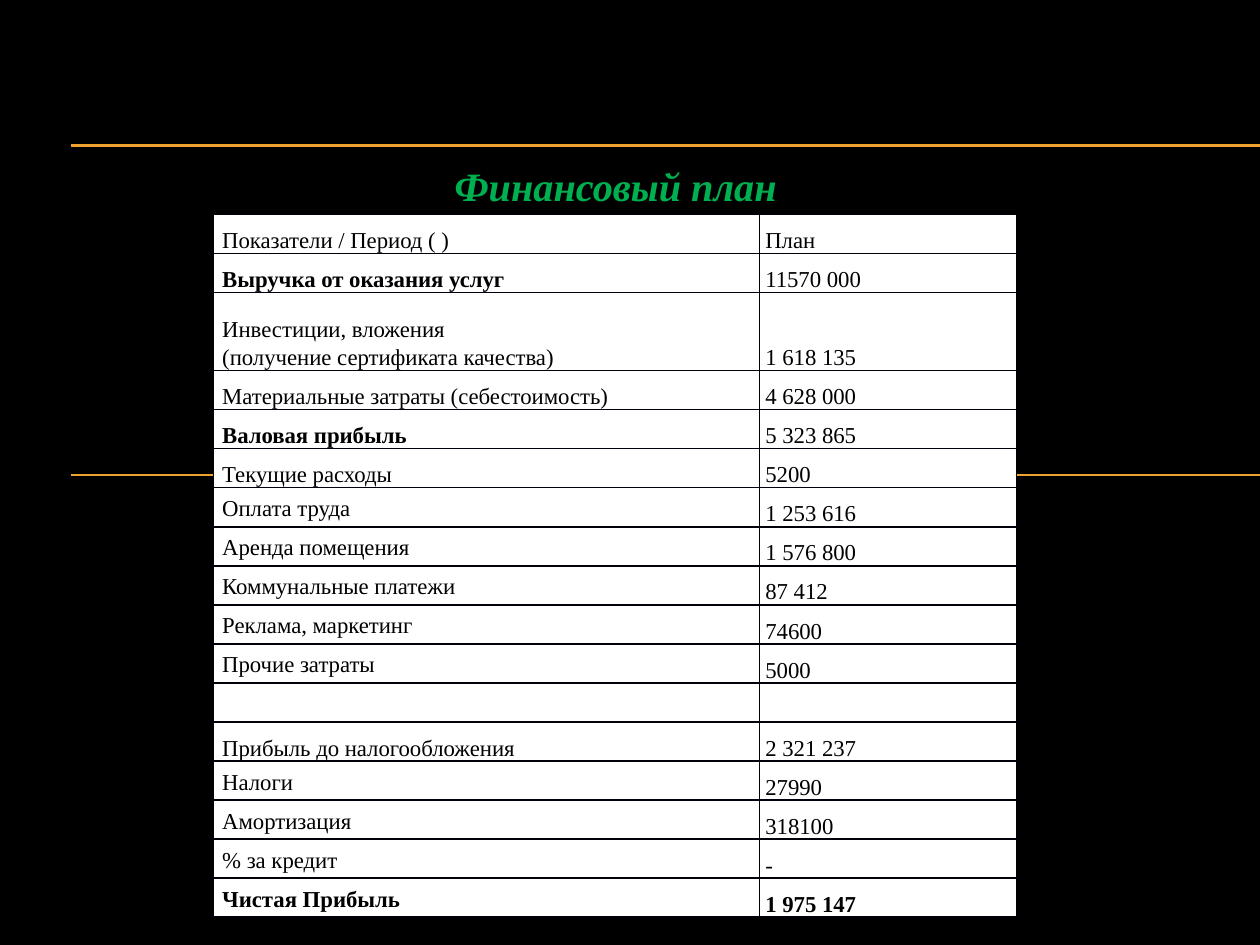
from lxml.etree import SubElement
from pptx import Presentation
from pptx.dml.color import RGBColor
from pptx.enum.shapes import MSO_CONNECTOR
from pptx.enum.text import MSO_ANCHOR, MSO_AUTO_SIZE, PP_ALIGN
from pptx.oxml.ns import qn
from pptx.util import Pt

BLACK = RGBColor(0, 0, 0)
WHITE = RGBColor(255, 255, 255)
GREEN = RGBColor(0x00, 0xB0, 0x50)
AMBER = RGBColor(0xF0, 0xA2, 0x2E)
EDGE = RGBColor(0x00, 0x00, 0x0A)
FACE = "Times New Roman"

LOW, MID = MSO_ANCHOR.BOTTOM, MSO_ANCHOR.MIDDLE
# Label, value, label anchor, label bold, value bold
ROWS = [
    ("Показатели / Период ( )", "План", LOW, False, False),
    ("Выручка от оказания услуг", "11570 000", LOW, True, False),
    ("Инвестиции, вложения\n(получение сертификата качества)",
     "1 618 135", LOW, False, False),
    ("Материальные затраты (себестоимость)", "4 628 000", LOW, False, False),
    ("Валовая прибыль", "5 323 865", LOW, True, False),
    ("Текущие расходы", "5200", LOW, False, False),
    ("Оплата труда", "1 253 616", MID, False, False),
    ("Аренда помещения", "1 576 800", MID, False, False),
    ("Коммунальные платежи", "87 412", MID, False, False),
    ("Реклама, маркетинг", "74600", MID, False, False),
    ("Прочие затраты", "5000", MID, False, False),
    ("", "", LOW, False, False),
    ("Прибыль до налогообложения", "2 321 237", LOW, False, False),
    ("Налоги", "27990", MID, False, False),
    ("Амортизация", "318100", MID, False, False),
    ("% за кредит", "-", MID, False, False),
    ("Чистая Прибыль", "1 975 147", MID, True, True),
]


def add_run(para, text, size, color, bold=False, italic=False):
    run = para.add_run()
    run.text = text
    font = run.font
    font.name, font.size = FACE, Pt(size)
    font.bold, font.italic = bold, italic
    font.color.rgb = color


def add_rule(slide, left, right, top):
    line = slide.shapes.add_connector(
        MSO_CONNECTOR.STRAIGHT, Pt(left), Pt(top), Pt(right), Pt(top))
    line.line.color.rgb = AMBER
    line.line.width = Pt(0.75)
    SubElement(line._element.spPr, qn("a:effectLst"))


def add_title(slide, left, top, width, height):
    box = slide.shapes.add_textbox(Pt(left), Pt(top), Pt(width), Pt(height))
    frame = box.text_frame
    frame.word_wrap = False
    frame.auto_size = MSO_AUTO_SIZE.SHAPE_TO_FIT_TEXT
    para = frame.paragraphs[0]
    para.alignment = PP_ALIGN.CENTER
    add_run(para, "Финансовый план", 23, GREEN, True, True)


def set_edges(cell):
    props = cell._tc.get_or_add_tcPr()
    for place, side in enumerate(("lnL", "lnR", "lnT", "lnB")):
        line = props.makeelement(qn("a:" + side), {"w": str(Pt(1))})
        fill = SubElement(line, qn("a:solidFill"))
        SubElement(fill, qn("a:srgbClr"), val=str(EDGE))
        props.insert(place, line)


def fill_cell(cell, text, inset, anchor, bold):
    cell.fill.solid()
    cell.fill.fore_color.rgb = WHITE
    set_edges(cell)
    cell.margin_left, cell.margin_right = Pt(inset), Pt(5)
    cell.margin_top = cell.margin_bottom = 0
    cell.vertical_anchor = anchor
    if not text:
        return
    frame = cell.text_frame
    parts = text.split("\n")
    for index, part in enumerate(parts):
        para = frame.add_paragraph() if index else frame.paragraphs[0]
        para.alignment = PP_ALIGN.JUSTIFY
        para.line_spacing = 1.15
        para.space_after = Pt(10 if len(parts) == 1 else 0)
        add_run(para, part, 13, BLACK, bold)


def add_plan(slide, left, top, width, height):
    table = slide.shapes.add_table(
        len(ROWS), 2, Pt(left), Pt(top), Pt(width), Pt(height)).table
    table.first_row = table.horz_banding = False
    table.columns[0].width = Pt(width * 0.68)
    table.columns[1].width = Pt(width * 0.32)
    # Each line of a label takes one unit of height
    units = [row[0].count("\n") + 1 for row in ROWS]
    for index, (label, value, anchor, strong, heavy) in enumerate(ROWS):
        table.rows[index].height = Pt(height * units[index] / sum(units))
        fill_cell(table.cell(index, 0), label, 5, anchor, strong)
        fill_cell(table.cell(index, 1), value, 3.25, LOW, heavy)


def main():
    deck = Presentation()
    deck.slide_width, deck.slide_height = Pt(720), Pt(540)
    slide = deck.slides.add_slide(deck.slide_layouts[6])
    back = slide.background.fill
    back.solid()
    back.fore_color.rgb = BLACK
    # Rules behind the content
    for top in (82.8, 83.5, 271.4):
        add_rule(slide, 40.5, 720, top)
    # Title and table
    add_title(slide, 252, 88.5, 200, 35.5)
    add_plan(slide, 122, 122.5, 459, 402)
    deck.save("out.pptx")


if __name__ == "__main__":
    main()
